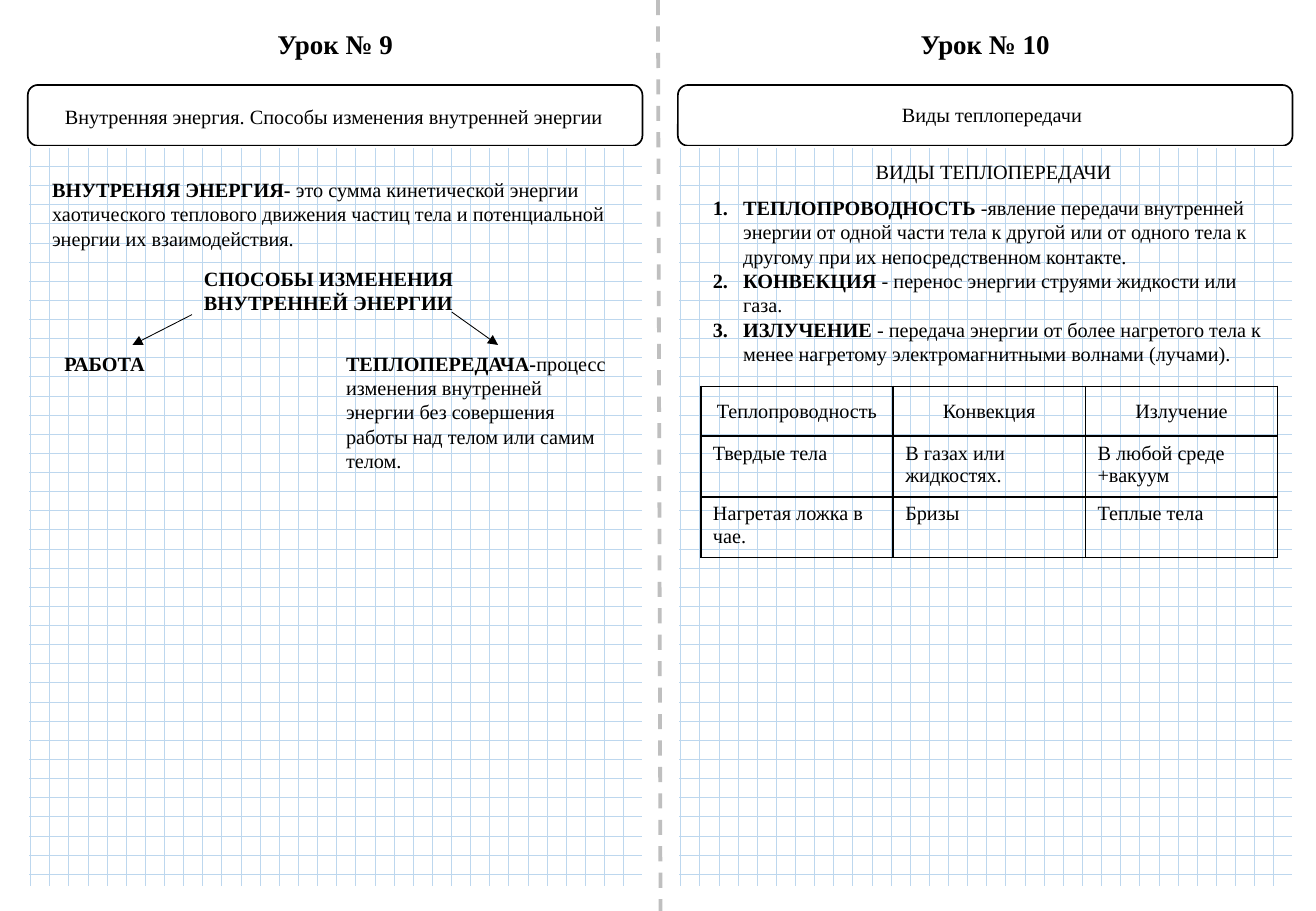
from dataclasses import dataclass
from typing import Any, NamedTuple

from lxml import etree
from pptx import Presentation
from pptx.dml.color import RGBColor
from pptx.enum.dml import MSO_LINE, MSO_PATTERN
from pptx.enum.shapes import MSO_CONNECTOR, MSO_SHAPE
from pptx.enum.text import MSO_ANCHOR, MSO_AUTO_SIZE, PP_ALIGN
from pptx.oxml.ns import qn
from pptx.util import Pt

LEFT, CENTER = PP_ALIGN.LEFT, PP_ALIGN.CENTER
TOP, MIDDLE = MSO_ANCHOR.TOP, MSO_ANCHOR.MIDDLE
FIT_SHAPE = MSO_AUTO_SIZE.SHAPE_TO_FIT_TEXT
DASH = MSO_LINE.DASH
DOTTED_GRID = MSO_PATTERN.DOTTED_GRID
STRAIGHT = MSO_CONNECTOR.STRAIGHT
ROUNDED = MSO_SHAPE.FLOWCHART_ALTERNATE_PROCESS
PLAIN = MSO_SHAPE.FLOWCHART_PROCESS


@dataclass(frozen=True)
class Theme:
    font: str = "Times New Roman"
    ink: RGBColor = RGBColor(0, 0, 0)
    paper: RGBColor = RGBColor(0xFF, 0xFF, 0xFF)
    grid: RGBColor = RGBColor(0xBD, 0xD7, 0xEE)
    fold: RGBColor = RGBColor(0xBF, 0xBF, 0xBF)
    title_size: float = 16
    body_size: float = 12


THEME = Theme()


class Area(NamedTuple):
    left: float
    top: float
    width: float
    height: float


class Piece(NamedTuple):
    text: str
    bold: bool = False


@dataclass(frozen=True)
class TextBlock:
    area: Area
    paragraphs: list[list[Piece]]
    align: PP_ALIGN = LEFT
    size: float = THEME.body_size
    numbered: bool = False


@dataclass(frozen=True)
class Lesson:
    left: float
    title: str
    topic: TextBlock


@dataclass(frozen=True)
class Segment:
    start: tuple[float, float]
    end: tuple[float, float]
    color: RGBColor = THEME.ink
    width: float = 0.5
    dashed: bool = False
    arrow: bool = True


PAGE_WIDTH, PAGE_HEIGHT = 780, 540
PANEL_WIDTH = 364.3

LESSONS = [
    Lesson(16.5, "Урок № 9", TextBlock(
        Area(23.8, 58.3, 348.5, 21.6),
        [[Piece("Внутренняя энергия. Способы изменения внутренней энергии")]], CENTER)),
    Lesson(401.8, "Урок № 10", TextBlock(
        Area(396, 57.4, 384, 21.6), [[Piece("Виды теплопередачи")]], CENTER)),
]

NOTES = [
    TextBlock(Area(23.8, 101.5, 348.5, 51), [[
        Piece("ВНУТРЕНЯЯ ЭНЕРГИЯ-", True),
        Piece(" это сумма кинетической энергии хаотического теплового движения "
              "частиц тела и потенциальной энергии их взаимодействия.")]]),
    TextBlock(Area(113.8, 154.1, 169.2, 36),
              [[Piece("СПОСОБЫ ИЗМЕНЕНИЯ ВНУТРЕННЕЙ ЭНЕРГИИ", True)]]),
    TextBlock(Area(31, 204.5, 131, 21.6), [[Piece("РАБОТА", True)]]),
    TextBlock(Area(198, 204.5, 171.4, 80), [[
        Piece("ТЕПЛОПЕРЕДАЧА-", True),
        Piece("процесс изменения внутренней энергии без совершения "
              "работы над телом или самим телом.")]]),
    TextBlock(Area(511.9, 90.7, 165.6, 21.6), [[Piece("ВИДЫ ТЕПЛОПЕРЕДАЧИ")]]),
    TextBlock(Area(415.4, 112.3, 344.2, 108.7), [
        [Piece("ТЕПЛОПРОВОДНОСТЬ ", True),
         Piece("-явление передачи внутренней энергии от одной части тела к другой "
               "или от одного тела к другому при их непосредственном контакте.")],
        [Piece("КОНВЕКЦИЯ", True),
         Piece(" - перенос энергии струями жидкости или газа.")],
        [Piece("ИЗЛУЧЕНИЕ", True),
         Piece(" - передача энергии от более нагретого тела к менее нагретому "
               "электромагнитными волнами (лучами).")],
    ], numbered=True),
]

FOLD = Segment((390, 0), (391.5, PAGE_HEIGHT), THEME.fold, 2.25, True, False)
ARROWS = [
    Segment((113.8, 186.5), (78.5, 204.5)),
    Segment((267.8, 185), (295.2, 204.5)),
]

TABLE_AREA = Area(415.4, 229, 342, 101.5)
ROW_HEIGHTS = [29.5, 36, 36]
TABLE_ROWS = [
    [["Теплопроводность"], ["Конвекция"], ["Излучение"]],
    [["Твердые тела"], ["В газах или жидкостях."], ["В любой среде", "+вакуум"]],
    [["Нагретая ложка в чае."], ["Бризы"], ["Теплые тела"]],
]


def apply_format(target: Any, values: dict[str, Any]) -> None:
    for name, value in values.items():
        setattr(target, name, value)


def in_points(numbers: tuple[float, ...]) -> list[Pt]:
    return [Pt(number) for number in numbers]


def write_paragraphs(frame: Any, paragraphs: list[list[Piece]], align: PP_ALIGN,
                     size: float, numbered: bool = False) -> None:
    for index, pieces in enumerate(paragraphs):
        para = frame.add_paragraph() if index else frame.paragraphs[0]
        para.alignment = align
        if numbered:
            properties = para._p.get_or_add_pPr()
            properties.set("marL", str(Pt(18)))
            properties.set("indent", str(-Pt(18)))
            etree.SubElement(properties, qn("a:buAutoNum"), type="arabicPeriod")
        for piece in pieces:
            span = para.add_run()
            span.text = piece.text
            apply_format(span.font, {"name": THEME.font, "size": Pt(size), "bold": piece.bold})
            span.font.color.rgb = THEME.ink


def draw_text(page: Any, block: TextBlock) -> None:
    box = page.shapes.add_textbox(*in_points(block.area))
    apply_format(box.text_frame, {"word_wrap": True, "auto_size": FIT_SHAPE})
    write_paragraphs(box.text_frame, block.paragraphs, block.align, block.size, block.numbered)


def draw_panel(page: Any, kind: MSO_SHAPE, area: Area, outline: RGBColor) -> Any:
    panel = page.shapes.add_shape(kind, *in_points(area))
    panel.shadow.inherit = False
    panel.fill.solid()
    panel.fill.fore_color.rgb = THEME.paper
    panel.line.color.rgb = outline
    panel.line.width = Pt(1)
    return panel


def draw_lesson(page: Any, lesson: Lesson) -> None:
    title_area = Area(lesson.left, 13, PANEL_WIDTH, 26.6)
    draw_text(page, TextBlock(title_area, [[Piece(lesson.title, True)]], CENTER, THEME.title_size))
    draw_panel(page, ROUNDED, Area(lesson.left, 50.4, PANEL_WIDTH, 36), THEME.ink)
    draw_text(page, lesson.topic)
    sheet = draw_panel(page, PLAIN, Area(lesson.left, 87.1, PANEL_WIDTH, 438.5), THEME.paper)
    sheet.fill.patterned()
    sheet.fill.pattern = DOTTED_GRID
    sheet.fill.fore_color.rgb = THEME.grid
    sheet.fill.back_color.rgb = THEME.paper


def draw_segment(page: Any, segment: Segment) -> None:
    connector = page.shapes.add_connector(STRAIGHT, *in_points(segment.start + segment.end))
    connector.line.color.rgb = segment.color
    connector.line.width = Pt(segment.width)
    if segment.dashed:
        connector.line.dash_style = DASH
    if segment.arrow:
        etree.SubElement(connector.get_or_add_ln(), qn("a:tailEnd"), type="triangle")
    etree.SubElement(connector.element.spPr, qn("a:effectLst"))


def border_cell(cell: Any) -> None:
    properties = cell._tc.get_or_add_tcPr()
    for side in ("lnL", "lnR", "lnT", "lnB"):
        border = etree.SubElement(properties, qn(f"a:{side}"), w=str(Pt(1)))
        fill = etree.SubElement(border, qn("a:solidFill"))
        etree.SubElement(fill, qn("a:srgbClr"), val=str(THEME.ink))


def draw_table(page: Any) -> None:
    columns = len(TABLE_ROWS[0])
    table = page.shapes.add_table(len(TABLE_ROWS), columns, *in_points(TABLE_AREA)).table
    apply_format(table, {"first_row": False, "horz_banding": False})
    for column in table.columns:
        column.width = Pt(TABLE_AREA.width / columns)
    for row_index, (height, texts) in enumerate(zip(ROW_HEIGHTS, TABLE_ROWS)):
        table.rows[row_index].height = Pt(height)
        align, anchor = (LEFT, TOP) if row_index else (CENTER, MIDDLE)
        for column_index, lines in enumerate(texts):
            cell = table.cell(row_index, column_index)
            border_cell(cell)
            cell.fill.background()
            cell.vertical_anchor = anchor
            write_paragraphs(cell.text_frame, [[Piece(line)] for line in lines],
                             align, THEME.body_size)


def main() -> None:
    deck = Presentation()
    apply_format(deck, {"slide_width": Pt(PAGE_WIDTH), "slide_height": Pt(PAGE_HEIGHT)})
    page = deck.slides.add_slide(deck.slide_layouts[6])
    draw_segment(page, FOLD)
    for lesson in LESSONS:
        draw_lesson(page, lesson)
    for block in NOTES:
        draw_text(page, block)
    for arrow in ARROWS:
        draw_segment(page, arrow)
    draw_table(page)
    deck.save("out.pptx")


if __name__ == "__main__":
    main()
